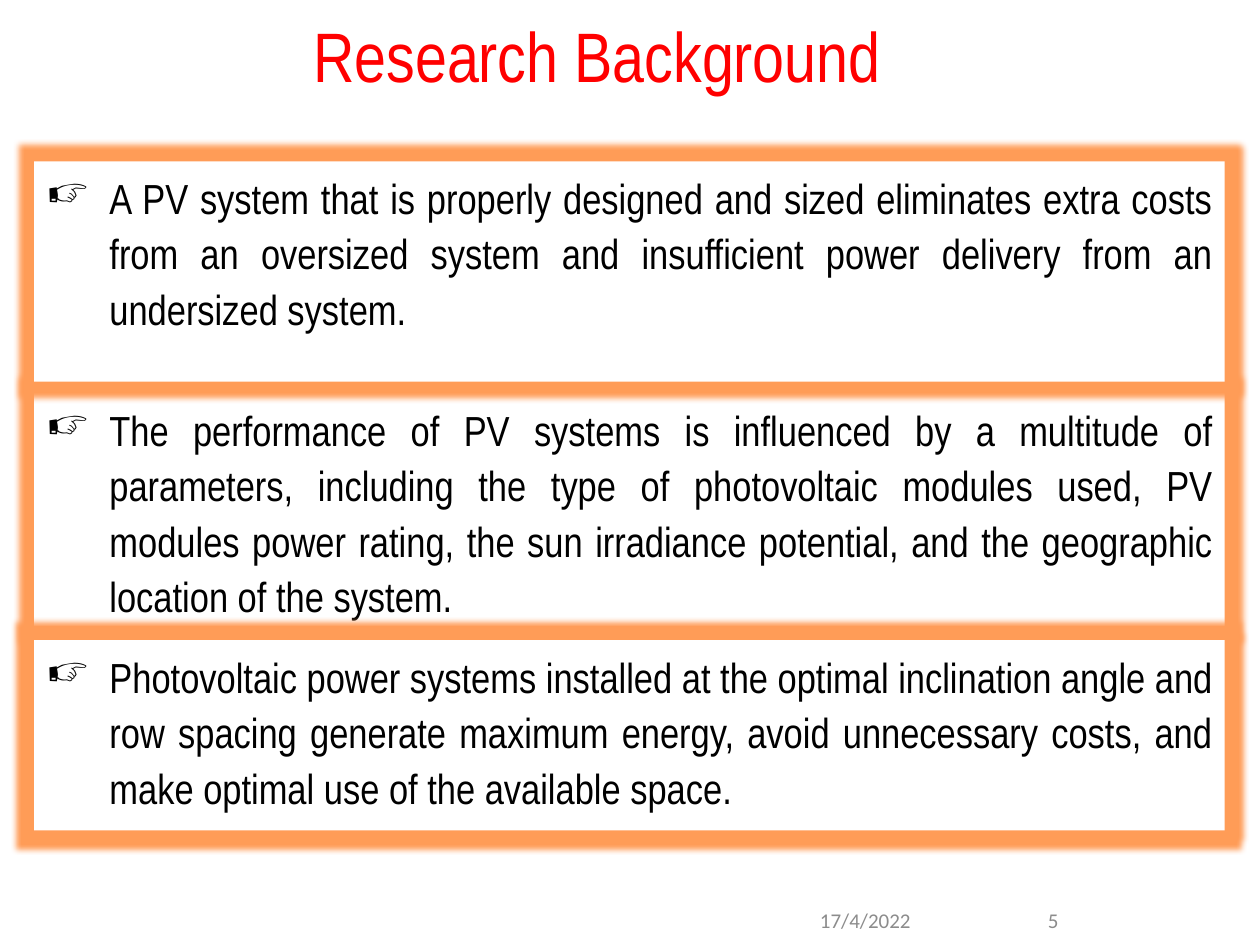
from dataclasses import dataclass

from lxml.etree import SubElement
from pptx import Presentation
from pptx.dml.color import RGBColor
from pptx.enum.shapes import MSO_SHAPE
from pptx.enum.text import MSO_ANCHOR, MSO_AUTO_SIZE, PP_ALIGN
from pptx.oxml.ns import qn
from pptx.util import Inches, Pt


@dataclass(frozen=True)
class Theme:
    red: RGBColor = RGBColor(0xFF, 0x00, 0x00)
    black: RGBColor = RGBColor(0x00, 0x00, 0x00)
    white: RGBColor = RGBColor(0xFF, 0xFF, 0xFF)
    gray: RGBColor = RGBColor(0x8C, 0x8C, 0x8C)
    glow: str = "FF9C57"
    main: str = "Arial Narrow"
    small: str = "Calibri"
    head_size: int = 40
    body_size: int = 24
    foot_size: int = 12


THEME = Theme()

# Panels from back to front: top, height, text
PANELS = [
    (3.12, 1.85, "The performance of PV systems is influenced by a multitude of "
     "parameters, including the type of photovoltaic modules used, PV modules "
     "power rating, the sun irradiance potential, and the geographic location "
     "of the system."),
    (1.28, 1.75, "A PV system that is properly designed and sized eliminates extra "
     "costs from an oversized system and insufficient power delivery from an "
     "undersized system."),
    (5.08, 1.51, "Photovoltaic power systems installed at the optimal inclination "
     "angle and row spacing generate maximum energy, avoid unnecessary costs, "
     "and make optimal use of the available space."),
]


def write(shape, text, face, size, color, align, anchor):
    """Fill a shape with one styled paragraph and return the paragraph."""
    frame = shape.text_frame
    frame.text = text
    frame.word_wrap = True
    frame.auto_size = MSO_AUTO_SIZE.NONE
    frame.vertical_anchor = anchor
    para = frame.paragraphs[0]
    para.alignment = align
    font = para.runs[0].font
    font.name, font.size, font.color.rgb = face, Pt(size), color
    return para


def add_title(slide):
    title = slide.shapes.title
    title.left, title.top = Inches(0.7), Inches(-0.2)
    title.width, title.height = Inches(8.2), Inches(1.02)
    para = write(title, "Research Background ", THEME.main, THEME.head_size,
                 THEME.red, PP_ALIGN.CENTER, MSO_ANCHOR.BOTTOM)
    para.line_spacing = 1.2
    para.space_after = Pt(6)


def add_glow(shape):
    """Put a soft coloured halo around a shape."""
    shape.shadow.inherit = False
    effects = shape._element.spPr.find(qn("a:effectLst"))
    glow = SubElement(effects, qn("a:glow"), rad=str(Inches(0.1)))
    color = SubElement(glow, qn("a:srgbClr"), val=THEME.glow)
    SubElement(color, qn("a:alpha"), val="100000")


def add_bullet(para, mark):
    props = para._p.get_or_add_pPr()
    props.set("marL", str(Inches(0.5)))
    props.set("indent", str(Inches(-0.5)))
    SubElement(props, qn("a:buChar"), char=mark)


def add_panel(slide, top, height, text):
    panel = slide.shapes.add_shape(MSO_SHAPE.RECTANGLE, Inches(0.27), Inches(top),
                                   Inches(9.45), Inches(height))
    panel.fill.solid()
    panel.fill.fore_color.rgb = THEME.white
    panel.line.fill.background()
    add_glow(panel)
    para = write(panel, text, THEME.main, THEME.body_size, THEME.black,
                 PP_ALIGN.JUSTIFY, MSO_ANCHOR.TOP)
    add_bullet(para, "☞")
    para.line_spacing = 1.1
    para.space_after = Pt(12)


def add_foot(slide, left, top, width, height, text, align):
    box = slide.shapes.add_textbox(Inches(left), Inches(top),
                                   Inches(width), Inches(height))
    write(box, text, THEME.small, THEME.foot_size, THEME.gray, align,
          MSO_ANCHOR.MIDDLE)


def main():
    deck = Presentation()
    deck.slide_width, deck.slide_height = Inches(10), Inches(7.5)
    slide = deck.slides.add_slide(deck.slide_layouts[5])

    # Heading
    add_title(slide)

    # Date and page number
    add_foot(slide, 6.41, 7.11, 1.4, 0.39, "17/4/2022", PP_ALIGN.LEFT)
    add_foot(slide, 7.89, 7.1, 0.61, 0.4, "5", PP_ALIGN.RIGHT)

    # Glowing panels
    for top, height, text in PANELS:
        add_panel(slide, top, height, text)

    deck.save("out.pptx")


if __name__ == "__main__":
    main()
